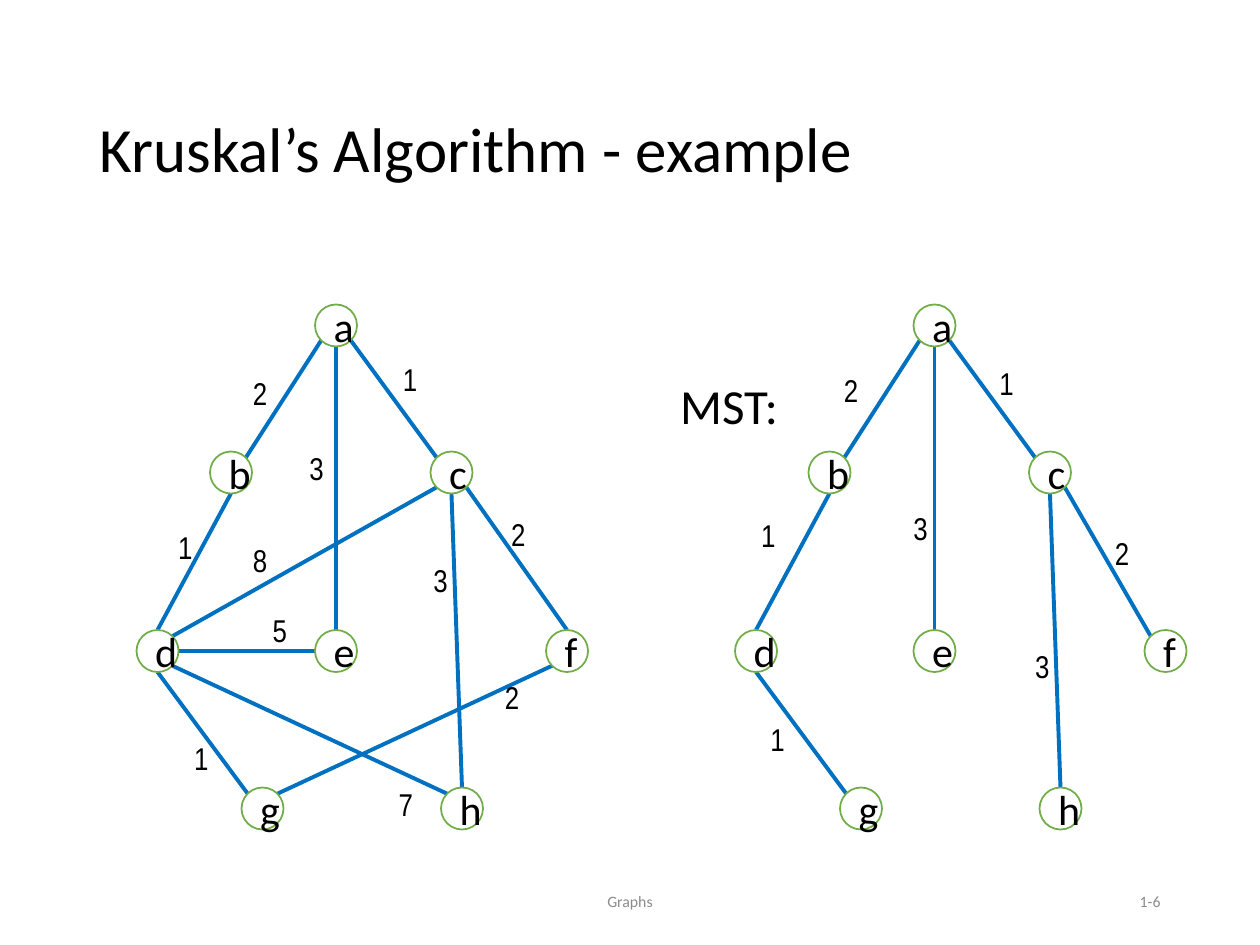
from dataclasses import dataclass

from lxml.etree import SubElement
from pptx import Presentation
from pptx.dml.color import RGBColor
from pptx.enum.shapes import MSO_CONNECTOR, MSO_SHAPE
from pptx.enum.text import MSO_ANCHOR, MSO_AUTO_SIZE, PP_ALIGN
from pptx.oxml.ns import qn
from pptx.util import Emu, Pt

PX = 7620  # EMU in one px, 120 px to the inch
RADIUS, DIAGONAL = 20, 14
MST_SHIFT = 570

NODES = {
    "a": (320, 310), "b": (220, 450), "c": (430, 450), "d": (150, 620),
    "e": (320, 620), "f": (540, 620), "g": (250, 770), "h": (440, 770),
}
SITES = {
    "N": (0, -RADIUS), "S": (0, RADIUS), "W": (-RADIUS, 0), "E": (RADIUS, 0),
    "NW": (-DIAGONAL, -DIAGONAL), "NE": (DIAGONAL, -DIAGONAL),
    "SW": (-DIAGONAL, DIAGONAL), "SE": (DIAGONAL, DIAGONAL),
}
# Start node and side, end node and side, weight, left and top of the weight
GRAPH_EDGES = [
    ("a", "SW", "b", "NE", 2, 229, 350),
    ("a", "S", "e", "N", 3, 283, 422),
    ("a", "SE", "c", "NW", 1, 372, 337),
    ("b", "S", "d", "N", 1, 158, 497),
    ("c", "SW", "d", "NE", 8, 229, 509),
    ("c", "S", "h", "N", 3, 401, 528),
    ("c", "SE", "f", "N", 2, 475, 485),
    ("d", "E", "e", "W", 5, 248, 576),
    ("d", "S", "g", "NW", 1, 173, 698),
    ("d", "SE", "h", "NW", 7, 368, 742),
    ("f", "SW", "g", "NE", 2, 469, 640),
]
MST_EDGES = [
    ("a", "SW", "b", "NE", 2, 222, 347),
    ("a", "S", "e", "N", 3, 288, 479),
    ("a", "SE", "c", "NW", 1, 370, 341),
    ("b", "S", "d", "N", 1, 143, 486),
    ("c", "S", "h", "N", 3, 404, 610),
    ("c", "SE", "f", "NW", 2, 480, 503),
    ("d", "S", "g", "NW", 1, 152, 680),
]


@dataclass(frozen=True)
class Theme:
    text: str = "000000"
    muted: str = "8C8C8C"
    node_fill: str = "FFFFFF"
    node_line: str = "70AD47"
    edge: str = "0070C0"
    font: str = "Calibri"
    weight_font: str = "Arial Narrow"
    title_size: int = 36
    heading_size: int = 28
    node_size: int = 24
    weight_size: int = 18
    footer_size: int = 9


def px(*lengths):
    return [Emu(length * PX) for length in lengths]


def set_all(target, values):
    for name, value in values.items():
        setattr(target, name, value)


class GraphSlide:
    """Draws elements on one slide in one theme."""

    def __init__(self, slide, theme):
        self.slide = slide
        self.theme = theme

    def set_text(self, shape, text, size, font=None, color=None, frame=None, paragraph=None):
        text_frame = shape.text_frame
        text_frame.text = text
        set_all(text_frame, frame or {})
        first = text_frame.paragraphs[0]
        set_all(first, paragraph or {})
        run_font = first.runs[0].font
        set_all(run_font, {"name": font or self.theme.font, "size": Pt(size)})
        run_font.color.rgb = RGBColor.from_string(color or self.theme.text)

    def title(self, text, box):
        title = self.slide.shapes.title
        set_all(title, dict(zip(("left", "top", "width", "height"), px(*box))))
        self.set_text(
            title, text, self.theme.title_size,
            frame={"vertical_anchor": MSO_ANCHOR.MIDDLE, "auto_size": MSO_AUTO_SIZE.NONE},
            paragraph={"alignment": PP_ALIGN.LEFT, "line_spacing": 1.15, "space_before": Pt(6)},
        )

    def label(self, text, box, size, font=None):
        """Add unwrapped text whose box fits it."""
        self.set_text(
            self.slide.shapes.add_textbox(*px(*box)), text, size, font,
            frame={"word_wrap": False, "auto_size": MSO_AUTO_SIZE.SHAPE_TO_FIT_TEXT},
        )

    def footer(self, text, box, alignment):
        self.set_text(
            self.slide.shapes.add_textbox(*px(*box)), text,
            self.theme.footer_size, color=self.theme.muted,
            frame={"word_wrap": True, "vertical_anchor": MSO_ANCHOR.MIDDLE},
            paragraph={"alignment": alignment},
        )

    def node(self, name, x, y):
        box = px(x - RADIUS, y - RADIUS, 2 * RADIUS, 2 * RADIUS)
        circle = self.slide.shapes.add_shape(MSO_SHAPE.OVAL, *box)
        circle.shadow.inherit = False
        circle.fill.solid()
        circle.fill.fore_color.rgb = RGBColor.from_string(self.theme.node_fill)
        circle.line.color.rgb = RGBColor.from_string(self.theme.node_line)
        circle.line.width = Pt(1)
        self.set_text(
            circle, name, self.theme.node_size,
            frame={"vertical_anchor": MSO_ANCHOR.MIDDLE},
            paragraph={"alignment": PP_ALIGN.CENTER},
        )

    def edge(self, start, end):
        line = self.slide.shapes.add_connector(MSO_CONNECTOR.STRAIGHT, *px(*start, *end))
        line.line.color.rgb = RGBColor.from_string(self.theme.edge)
        line.line.width = Pt(2.25)
        SubElement(line._element.spPr, qn("a:effectLst"))

    def graph(self, edges, shift=0):
        """Draw all nodes and the given weighted edges, moved right by shift."""
        def site(node, side):
            (x, y), (dx, dy) = NODES[node], SITES[side]
            return x + dx + shift, y + dy

        for start, start_side, end, end_side, *_ in edges:
            self.edge(site(start, start_side), site(end, end_side))
        for name, (x, y) in NODES.items():
            self.node(name, x + shift, y)
        for *_, weight, left, top in edges:
            self.label(str(weight), (left + shift, top, 38, 48),
                       self.theme.weight_size, self.theme.weight_font)


def main():
    presentation = Presentation()
    presentation.slide_width, presentation.slide_height = px(1200, 900)
    slide = presentation.slides.add_slide(presentation.slide_layouts[5])
    page = GraphSlide(slide, Theme())

    page.title("Kruskal’s Algorithm - example", (83, 48, 1034, 174))
    page.graph(GRAPH_EDGES)
    page.label("MST:", (636, 352, 119, 68), page.theme.heading_size)
    page.graph(MST_EDGES, MST_SHIFT)
    page.footer("Graphs", (397, 834, 406, 48), PP_ALIGN.CENTER)
    page.footer("1-6", (847, 834, 270, 48), PP_ALIGN.RIGHT)

    presentation.save("out.pptx")


if __name__ == "__main__":
    main()
